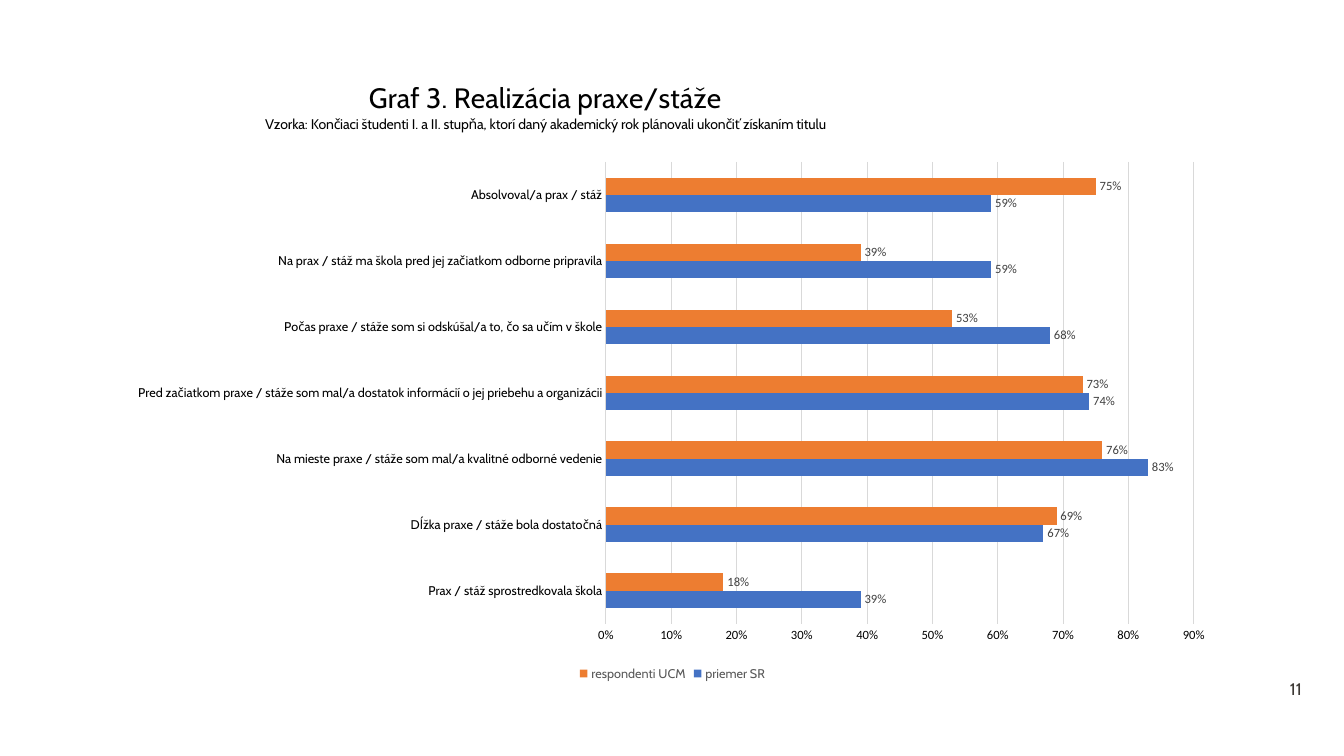
"""Builds the slide with the bar chart on student internships."""
import dataclasses

import lxml.etree
import pptx
import pptx.chart.data
import pptx.dml.color
import pptx.enum.chart
import pptx.enum.text
import pptx.oxml.ns
import pptx.util

Inches = pptx.util.Inches
Pt = pptx.util.Pt
qn = pptx.oxml.ns.qn


@dataclasses.dataclass(frozen=True)
class Theme:
    """Fonts, colours and type sizes of the slide."""
    text_font: str = "Cabin"
    number_font: str = "Calibri"
    black: str = "000000"
    label: str = "404040"
    legend: str = "595959"
    grid: str = "D9D9D9"
    page: str = "3D3935"
    title_size: float = 20
    subtitle_size: float = 10
    chart_size: float = 10
    page_size: float = 12
    small_size: float = 9


@dataclasses.dataclass(frozen=True)
class Group:
    """One series of bars."""
    name: str
    color: str
    values: tuple[float, ...]


THEME = Theme()
TITLE = "Graf 3. Realizácia praxe/stáže"
SUBTITLE = ("Vzorka: Končiaci študenti I. a II. stupňa, ktorí daný akademický rok "
            "plánovali ukončiť získaním titulu")
QUESTIONS = (
    "Prax / stáž sprostredkovala škola",
    "Dĺžka praxe / stáže bola dostatočná",
    "Na mieste praxe / stáže som mal/a kvalitné odborné vedenie",
    "Pred začiatkom praxe / stáže som mal/a dostatok informácií o jej priebehu a organizácii",
    "Počas praxe / stáže som si odskúšal/a to, čo sa učím v škole",
    "Na prax / stáž ma škola pred jej začiatkom odborne pripravila",
    "Absolvoval/a prax / stáž",
)
GROUPS = (
    Group("priemer SR", "4472C4", (0.39, 0.67, 0.83, 0.74, 0.68, 0.59, 0.59)),
    Group("respondenti UCM", "ED7D31", (0.18, 0.69, 0.76, 0.73, 0.53, 0.39, 0.75)),
)


def rgb(color: str) -> pptx.dml.color.RGBColor:
    """Return the colour object for a hex string."""
    return pptx.dml.color.RGBColor.from_string(color)


def set_font(font, size: float, color: str, name: str) -> None:
    """Set size, colour and typeface of a font."""
    font.size = Pt(size)
    font.bold = False
    font.name = name
    font.color.rgb = rgb(color)


def set_line(line, color: str) -> None:
    """Give a chart line its colour and width."""
    line.color.rgb = rgb(color)
    line.width = Pt(0.75)


def set_layout(part, index: int, **settings: str | float) -> None:
    """Place a chart part by fractions of the chart area."""
    layout = part.find(qn("c:layout"))
    if layout is None:
        layout = part.makeelement(qn("c:layout"))
        part.insert(index, layout)
    manual = lxml.etree.SubElement(layout, qn("c:manualLayout"))
    for tag, value in settings.items():
        lxml.etree.SubElement(manual, qn(f"c:{tag}")).set("val", str(value))


def add_title(chart) -> None:
    """Write the two-line chart title left of the centre."""
    tf = chart.chart_title.text_frame
    lines = ((TITLE, THEME.title_size), (SUBTITLE, THEME.subtitle_size))
    for i, (text, size) in enumerate(lines):
        p = tf.paragraphs[0] if i == 0 else tf.add_paragraph()
        p.alignment = pptx.enum.text.PP_ALIGN.CENTER
        r = p.add_run()
        r.text = text
        set_font(r.font, size, THEME.black, THEME.text_font)
    title = chart._chartSpace.chart.find(qn("c:title"))
    set_layout(title, 1, xMode="edge", yMode="edge", x=0.13, y=0.01)


def style_axes(chart) -> None:
    """Format both axes and the grid."""
    fonts = ((chart.category_axis, THEME.text_font), (chart.value_axis, THEME.number_font))
    for axis, name in fonts:
        axis.major_tick_mark = pptx.enum.chart.XL_TICK_MARK.NONE
        axis.minor_tick_mark = pptx.enum.chart.XL_TICK_MARK.NONE
        set_font(axis.tick_labels.font, THEME.small_size, THEME.black, name)
    set_line(chart.category_axis.format.line, THEME.grid)
    scale = chart.value_axis
    scale.minimum_scale, scale.maximum_scale, scale.major_unit = 0, 0.9, 0.1
    scale.format.line.fill.background()
    scale.has_major_gridlines = True
    set_line(scale.major_gridlines.format.line, THEME.grid)
    scale.tick_labels.number_format = "0%"
    scale.tick_labels.number_format_is_linked = False


def style_bars(chart) -> None:
    """Colour the bars and label them with their values."""
    plot = chart.plots[0]
    plot.gap_width = 182
    plot.overlap = 0
    plot.vary_by_categories = False
    for series, group in zip(plot.series, GROUPS):
        series.format.fill.solid()
        series.format.fill.fore_color.rgb = rgb(group.color)
        labels = series.data_labels
        labels.show_value = True
        labels.number_format = "0%"
        labels.number_format_is_linked = False
        labels.position = pptx.enum.chart.XL_LABEL_POSITION.OUTSIDE_END
        set_font(labels.font, THEME.small_size, THEME.label, THEME.number_font)


def add_bar_chart(s) -> None:
    """Add the clustered bar chart."""
    data = pptx.chart.data.CategoryChartData(number_format="0%")
    data.categories = QUESTIONS
    for group in GROUPS:
        data.add_series(group.name, group.values)
    frame = s.shapes.add_chart(
        pptx.enum.chart.XL_CHART_TYPE.BAR_CLUSTERED,
        Inches(1.17), Inches(0.69), Inches(11), Inches(6.11), data)
    chart = frame.chart
    set_font(chart.font, THEME.chart_size, THEME.black, THEME.number_font)
    add_title(chart)
    style_axes(chart)
    style_bars(chart)
    chart.has_legend = True
    chart.legend.position = pptx.enum.chart.XL_LEGEND_POSITION.BOTTOM
    chart.legend.include_in_layout = False
    set_font(chart.legend.font, THEME.small_size, THEME.legend, THEME.text_font)
    set_layout(chart._chartSpace.chart.plotArea, 0, layoutTarget="inner",
               xMode="edge", yMode="edge", x=0.44, y=0.15, w=0.53, h=0.75)


def add_page_number(s) -> None:
    """Add the page number in the lower right corner."""
    sp = s.shapes.add_textbox(Inches(12.25), Inches(6.67), Inches(0.76), Inches(0.32))
    tf = sp.text_frame
    tf.word_wrap = True
    tf.vertical_anchor = pptx.enum.text.MSO_ANCHOR.MIDDLE
    p = tf.paragraphs[0]
    p.alignment = pptx.enum.text.PP_ALIGN.RIGHT
    r = p.add_run()
    r.text = "11"
    set_font(r.font, THEME.page_size, THEME.page, THEME.text_font)


def main() -> None:
    """Build and save the slide."""
    prs = pptx.Presentation()
    prs.slide_width, prs.slide_height = Inches(13.33), Inches(7.5)
    s = prs.slides.add_slide(prs.slide_layouts[6])
    add_page_number(s)
    add_bar_chart(s)
    prs.save("out.pptx")


if __name__ == "__main__":
    main()
